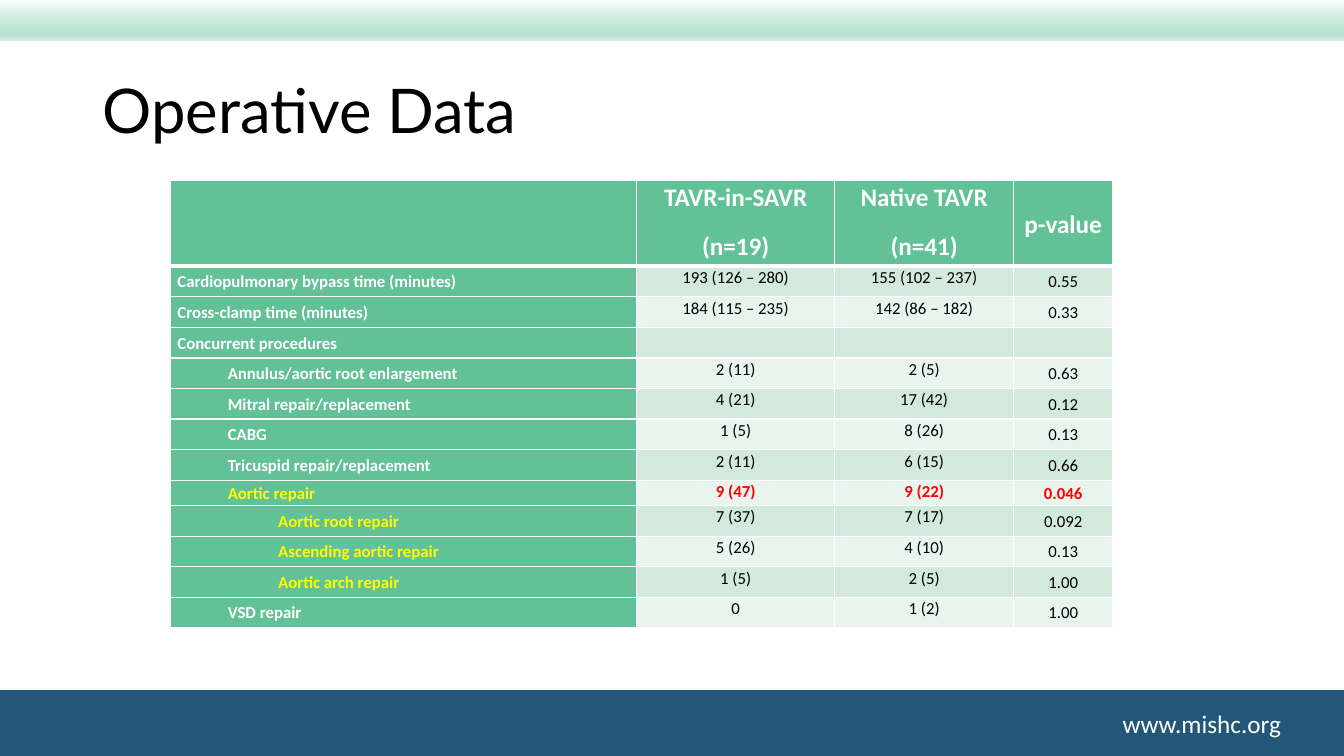
from dataclasses import dataclass

from lxml import etree
from pptx import Presentation
from pptx.dml.color import RGBColor
from pptx.enum.shapes import MSO_SHAPE
from pptx.enum.text import MSO_ANCHOR, MSO_AUTO_SIZE, PP_ALIGN
from pptx.oxml.ns import qn
from pptx.shapes.autoshape import Shape
from pptx.slide import Slide
from pptx.table import Table, _Cell
from pptx.text.text import TextFrame
from pptx.util import Cm, Pt

RECTANGLE = MSO_SHAPE.RECTANGLE
TOP, MIDDLE = MSO_ANCHOR.TOP, MSO_ANCHOR.MIDDLE
LEFT, CENTER = PP_ALIGN.LEFT, PP_ALIGN.CENTER
NO_AUTOFIT = MSO_AUTO_SIZE.NONE


@dataclass(frozen=True)
class Theme:
    title_font: str = "Lato"
    body_font: str = "Calibri"
    title_size: int = 44
    header_size: int = 18
    body_size: int = 12
    black: str = "000000"
    white: str = "FFFFFF"
    navy: str = "23577A"
    green: str = "62C196"
    bands: tuple[str, str] = ("D3E9DD", "EAF4EF")
    yellow: str = "FFFF00"
    red: str = "FF0000"
    top_stops: tuple[tuple[int, str], ...] = (
        (0, "F7FCFA"), (74, "B8E3D0"), (83, "B8E3D0"), (100, "D0ECE0"))
    border: float = 1
    header_rule: float = 3


@dataclass(frozen=True)
class Measure:
    label: str
    tavr_in_savr: str = ""
    native_tavr: str = ""
    p_value: str = ""
    level: int = 0
    aortic: bool = False
    significant: bool = False
    height: float = 0.77


THEME = Theme()
SLIDE_WIDTH, SLIDE_HEIGHT = 33.87, 19.05
COLUMN_WIDTHS = (11.76, 4.98, 4.52, 2.49)
HEADER_HEIGHT = 2.16
LEVEL_INDENT = 1.27
HEADERS = ((), ("TAVR-in-SAVR", "(n=19)"), ("Native TAVR", "(n=41)"), ("p-value",))
MEASURES = (
    Measure("Cardiopulmonary bypass time (minutes)", "193 (126 – 280)", "155 (102 – 237)", "0.55"),
    Measure("Cross-clamp time (minutes)", "184 (115 – 235)", "142 (86 – 182)", "0.33"),
    Measure("Concurrent procedures"),
    Measure("Annulus/aortic root enlargement", "2 (11)", "2 (5)", "0.63", 1),
    Measure("Mitral repair/replacement", "4 (21)", "17 (42)", "0.12", 1),
    Measure("CABG", "1 (5)", "8 (26)", "0.13", 1),
    Measure("Tricuspid repair/replacement", "2 (11)", "6 (15)", "0.66", 1),
    Measure("Aortic repair", "9 (47)", "9 (22)", "0.046", 1, True, True, 0.64),
    Measure("Aortic root repair", "7 (37)", "7 (17)", "0.092", 2, True),
    Measure("Ascending aortic repair", "5 (26)", "4 (10)", "0.13", 2, True),
    Measure("Aortic arch repair", "1 (5)", "2 (5)", "1.00", 2, True),
    Measure("VSD repair", "0", "1 (2)", "1.00", 1),
)


def write(frame: TextFrame, *lines: str, size: float, color: str,
          font: str = THEME.body_font, bold: bool = False, align: PP_ALIGN = LEFT,
          spacing: float = 1.0, after: float = 0, first_after: float = 0,
          before: float = 0, indent: float = 0) -> None:
    """Write one paragraph per line; before and first_after part the lines."""
    for number, line in enumerate(lines):
        paragraph = frame.paragraphs[0] if number == 0 else frame.add_paragraph()
        paragraph.alignment = align
        paragraph.line_spacing = spacing
        is_opening = number == 0 and len(lines) > 1
        paragraph.space_after = Pt(first_after if is_opening else after)
        if number:
            paragraph.space_before = Pt(before)
        if indent:
            properties = paragraph._p.get_or_add_pPr()
            properties.set("marL", str(Cm(indent)))
            properties.set("indent", "0")
        run = paragraph.add_run()
        run.text = line
        run.font.name, run.font.size, run.font.bold = font, Pt(size), bold
        run.font.color.rgb = RGBColor.from_string(color)


def add_band(slide: Slide, top: float, height: float, color: str) -> Shape:
    band = slide.shapes.add_shape(RECTANGLE, 0, Cm(top), Cm(SLIDE_WIDTH), Cm(height))
    band.shadow.inherit = False
    band.line.fill.background()
    band.fill.solid()
    band.fill.fore_color.rgb = RGBColor.from_string(color)
    return band


def shade_downwards(band: Shape, stops: tuple[tuple[int, str], ...]) -> None:
    band.fill.gradient()
    band.fill.gradient_angle = 270
    stop_list = next(band._element.iter(qn("a:gsLst")))
    for stop in list(stop_list):
        stop_list.remove(stop)
    for percent, color in stops:
        stop = etree.SubElement(stop_list, qn("a:gs"), pos=str(percent * 1000))
        etree.SubElement(stop, qn("a:srgbClr"), val=color)


def style_cell(cell: _Cell, fill: str, anchor: MSO_ANCHOR,
               top_rule: float = THEME.border, bottom_rule: float = THEME.border) -> None:
    cell.margin_left = cell.margin_right = Cm(0.18)
    cell.margin_top = cell.margin_bottom = 0
    cell.vertical_anchor = anchor
    properties = cell._tc.get_or_add_tcPr()
    rules = {"lnL": THEME.border, "lnR": THEME.border, "lnT": top_rule, "lnB": bottom_rule}
    for side, width in rules.items():
        rule = etree.SubElement(properties, qn(f"a:{side}"), w=str(Pt(width)))
        solid = etree.SubElement(rule, qn("a:solidFill"))
        etree.SubElement(solid, qn("a:srgbClr"), val=THEME.white)
    cell.fill.solid()
    cell.fill.fore_color.rgb = RGBColor.from_string(fill)


def fill_header(table: Table) -> None:
    table.rows[0].height = Cm(HEADER_HEIGHT)
    for column, lines in enumerate(HEADERS):
        cell = table.cell(0, column)
        style_cell(cell, THEME.green, MIDDLE if len(lines) == 1 else TOP,
                   bottom_rule=THEME.header_rule)
        write(cell.text_frame, *lines, size=THEME.header_size, color=THEME.white,
              bold=True, align=CENTER, spacing=1.07, first_after=8, before=3, after=3)


def fill_measure(table: Table, row: int, measure: Measure) -> None:
    table.rows[row].height = Cm(measure.height)
    top_rule = THEME.header_rule if row == 1 else THEME.border
    label = table.cell(row, 0)
    style_cell(label, THEME.green, MIDDLE, top_rule)
    write(label.text_frame, measure.label, size=THEME.body_size, bold=True,
          color=THEME.yellow if measure.aortic else THEME.white,
          spacing=1.07, after=3, indent=measure.level * LEVEL_INDENT)
    values = (measure.tavr_in_savr, measure.native_tavr, measure.p_value)
    for column, value in enumerate(values, start=1):
        cell = table.cell(row, column)
        is_p_value = column == len(values)
        style_cell(cell, THEME.bands[(row - 1) % 2], MIDDLE if is_p_value else TOP, top_rule)
        if value:
            write(cell.text_frame, value, size=THEME.body_size, bold=measure.significant,
                  color=THEME.red if measure.significant else THEME.black,
                  align=CENTER, spacing=1.07, after=3)


def add_operative_table(slide: Slide) -> None:
    height = HEADER_HEIGHT + sum(measure.height for measure in MEASURES)
    table = slide.shapes.add_table(
        len(MEASURES) + 1, len(COLUMN_WIDTHS), Cm(4.29), Cm(4.55),
        Cm(sum(COLUMN_WIDTHS)), Cm(height)).table
    table.first_col = True
    table.horz_banding = False
    for column, width in zip(table.columns, COLUMN_WIDTHS):
        column.width = Cm(width)
    fill_header(table)
    for row, measure in enumerate(MEASURES, start=1):
        fill_measure(table, row, measure)


def main() -> None:
    deck = Presentation()
    deck.slide_width, deck.slide_height = Cm(SLIDE_WIDTH), Cm(SLIDE_HEIGHT)
    slide = deck.slides.add_slide(deck.slide_layouts[5])

    footer_top = 17.39
    add_band(slide, footer_top, SLIDE_HEIGHT - footer_top, THEME.navy)
    top_band = add_band(slide, 0, 1.03, THEME.white)
    shade_downwards(top_band, THEME.top_stops)

    website = slide.shapes.add_textbox(Cm(28.04), Cm(17.73), Cm(4.55), Cm(1.03)).text_frame
    website.word_wrap = True
    write(website, "www.mishc.org", size=THEME.header_size, color=THEME.white)

    title = slide.shapes.title
    title.left, title.top, title.width, title.height = Cm(2.33), Cm(1.01), Cm(29.21), Cm(3.68)
    title.text_frame.auto_size = NO_AUTOFIT
    title.text_frame.vertical_anchor = MIDDLE
    write(title.text_frame, "Operative Data", size=THEME.title_size, color=THEME.black,
          font=THEME.title_font, spacing=0.9)

    add_operative_table(slide)
    deck.save("out.pptx")


if __name__ == "__main__":
    main()
